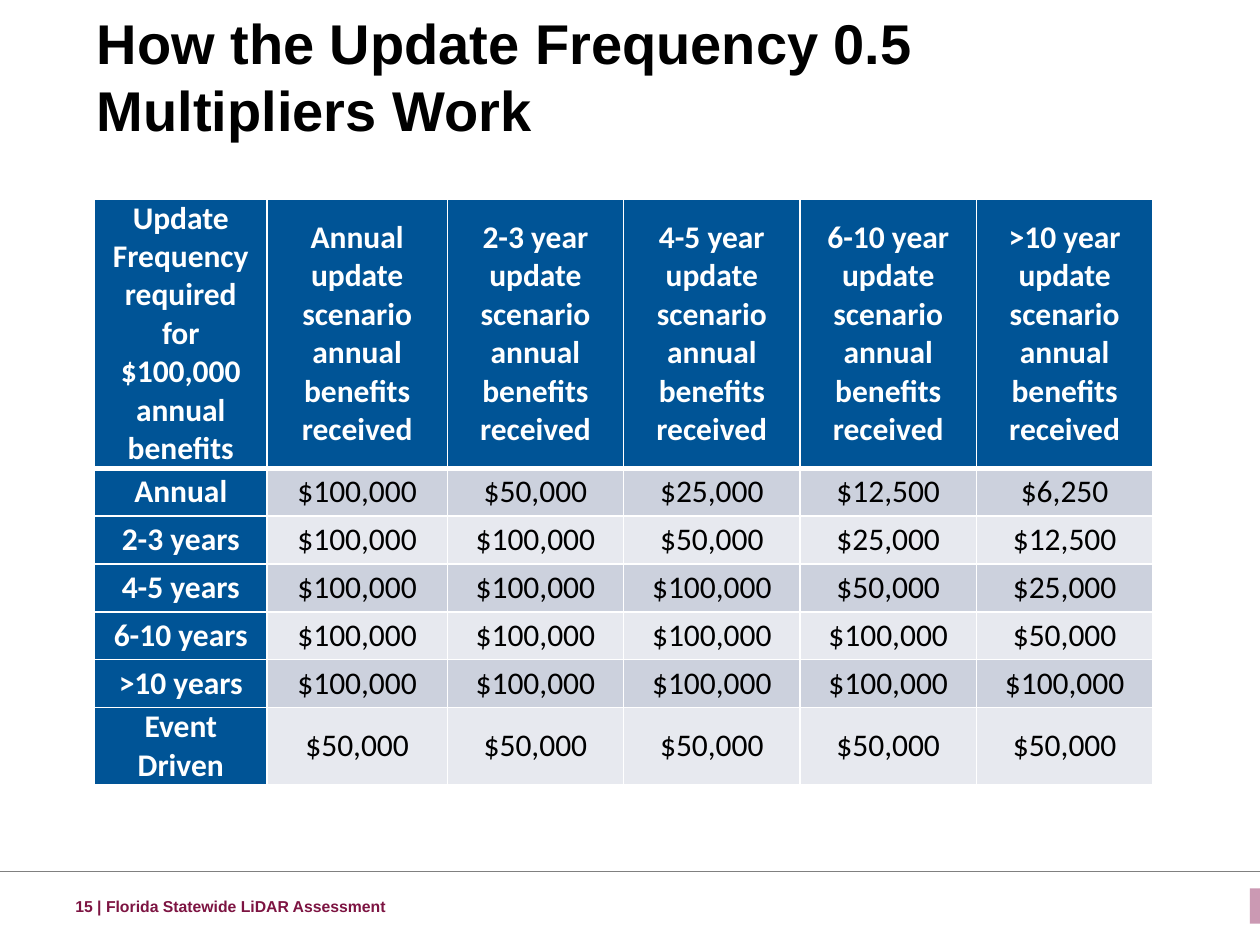
from lxml.etree import SubElement
from pptx import Presentation
from pptx.dml.color import RGBColor
from pptx.enum.shapes import MSO_CONNECTOR, MSO_SHAPE
from pptx.enum.text import MSO_ANCHOR, PP_ALIGN
from pptx.oxml.ns import qn
from pptx.util import Inches, Pt

WHITE, BLACK, BLUE = "FFFFFF", "000000", "005496"
BANDS = ("CCD1DD", "E7E9EF")
SCENARIO = "update scenario annual benefits received"
HEADINGS = ["Update Frequency required for $100,000 annual benefits"] + [
    f"{period} {SCENARIO}"
    for period in ("Annual", "2-3 year", "4-5 year", "6-10 year", ">10 year")
]
BENEFITS = [
    ["Annual", 100000, 50000, 25000, 12500, 6250],
    ["2-3 years", 100000, 100000, 50000, 25000, 12500],
    ["4-5 years", 100000, 100000, 100000, 50000, 25000],
    ["6-10 years", 100000, 100000, 100000, 100000, 50000],
    [">10 years", 100000, 100000, 100000, 100000, 100000],
    ["Event Driven", 50000, 50000, 50000, 50000, 50000],
]
COLUMN_WIDTHS = [1.37, 1.43] + [1.4] * 4
ROW_HEIGHTS = [1.83] + [0.38] * 6


def color(value):
    return RGBColor.from_string(value)


def add_span(para, text, font, size, ink, bold):
    span = para.add_run()
    span.text = text
    span.font.name = font
    span.font.size = Pt(size)
    span.font.bold = bold
    span.font.color.rgb = color(ink)


def add_text(page, text, left, top, width, height, size, ink):
    box = page.shapes.add_textbox(
        Inches(left), Inches(top), Inches(width), Inches(height)
    )
    frame = box.text_frame
    frame.word_wrap = True
    frame.vertical_anchor = MSO_ANCHOR.MIDDLE
    add_span(frame.paragraphs[0], text, "Arial", size, ink, True)


def add_borders(cell, widths):
    properties = cell._tc.get_or_add_tcPr()
    for side, width in zip("LRTB", widths):
        border = SubElement(properties, qn(f"a:ln{side}"), w=str(Pt(width)))
        fill = SubElement(border, qn("a:solidFill"))
        SubElement(fill, qn("a:srgbClr"), val=WHITE)


def fill_cell(cell, text, row, column):
    heading = row == 0 or column == 0
    add_borders(cell, (1, 1, 3 if row == 1 else 1, 3 if row == 0 else 1))
    cell.fill.solid()
    cell.fill.fore_color.rgb = color(BLUE if heading else BANDS[(row - 1) % 2])
    cell.margin_left = cell.margin_right = Inches(0.07)
    cell.margin_top = cell.margin_bottom = 0
    corner = row == column == 0
    cell.vertical_anchor = MSO_ANCHOR.TOP if corner else MSO_ANCHOR.MIDDLE
    para = cell.text_frame.paragraphs[0]
    para.alignment = PP_ALIGN.CENTER
    add_span(para, text, "Calibri", 18, WHITE if heading else BLACK, heading)


def add_benefit_table(page):
    rows = [HEADINGS] + [
        [name] + [f"${value:,}" for value in values] for name, *values in BENEFITS
    ]
    table = page.shapes.add_table(
        len(rows), len(HEADINGS), Inches(0.75), Inches(1.58),
        Inches(sum(COLUMN_WIDTHS)), Inches(sum(ROW_HEIGHTS)),
    ).table
    for column, width in zip(table.columns, COLUMN_WIDTHS):
        column.width = Inches(width)
    for row, height in zip(table.rows, ROW_HEIGHTS):
        row.height = Inches(height)
    for row, texts in enumerate(rows):
        for column, text in enumerate(texts):
            fill_cell(table.cell(row, column), text, row, column)


def add_footer_rule(page):
    rule = page.shapes.add_connector(
        MSO_CONNECTOR.STRAIGHT,
        Inches(-0.33), Inches(6.92), Inches(10.33), Inches(6.92),
    )
    rule.line.color.rgb = color("808080")
    rule.line.width = Pt(0.5)
    SubElement(rule._element.spPr, qn("a:effectLst"))


def add_edge_block(page):
    block = page.shapes.add_shape(
        MSO_SHAPE.RECTANGLE, Inches(9.92), Inches(7.05), Inches(0.1), Inches(0.28)
    )
    block.shadow.inherit = False
    block.fill.solid()
    block.fill.fore_color.rgb = color("CB99B3")
    block.line.fill.background()


def main():
    deck = Presentation()
    deck.slide_width = Inches(10)
    deck.slide_height = Inches(7.5)
    page = deck.slides.add_slide(deck.slide_layouts[6])
    add_footer_rule(page)
    add_edge_block(page)
    add_benefit_table(page)
    add_text(page, "How the Update Frequency 0.5 Multipliers Work",
             0.67, 0.25, 8.92, 0.7, 32, BLACK)
    add_text(page, "15 | Florida Statewide LiDAR Assessment",
             0.5, 7.08, 6.17, 0.22, 9, "7D1442")
    deck.save("out.pptx")


if __name__ == "__main__":
    main()
